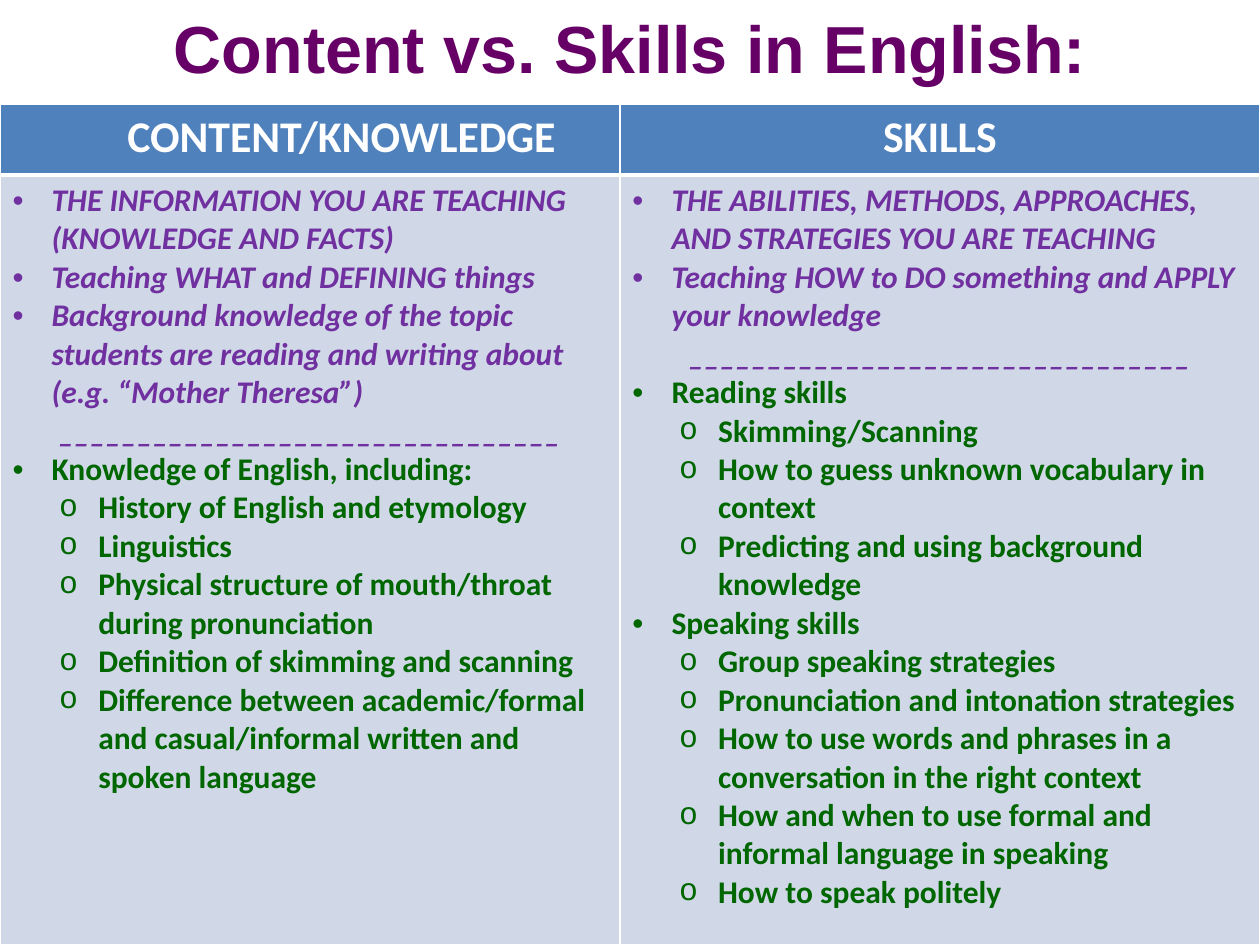
from dataclasses import dataclass

from lxml.etree import SubElement
from pptx import Presentation
from pptx.dml.color import RGBColor
from pptx.enum.text import MSO_ANCHOR, PP_ALIGN
from pptx.oxml.ns import qn
from pptx.util import Emu, Pt

PX = 9144  # 100 px to the inch
PURPLE = RGBColor(0x70, 0x30, 0xA0)
GREEN = RGBColor(0x00, 0x66, 0x00)
PLUM = RGBColor(0x66, 0x00, 0x66)
WHITE = RGBColor(0xFF, 0xFF, 0xFF)
HEADER_BLUE = RGBColor(0x4F, 0x81, 0xBD)
BODY_BLUE = RGBColor(0xD0, 0xD8, 0xE8)


@dataclass(frozen=True)
class Style:
    color: RGBColor
    size: int = 18
    italic: bool = False
    level: int = 0
    indent: int = 0
    hanging: int = 0
    bullet: str = ""
    bullet_font: str = "Arial"
    centered: bool = False


@dataclass(frozen=True)
class Line:
    text: str
    style: Style


@dataclass(frozen=True)
class Column:
    width: int
    heading: Line
    lines: list[Line]


SUMMARY = Style(PURPLE, italic=True, level=1, indent=31, hanging=31, bullet="•")
DIVIDER = Style(PURPLE, italic=True, level=1, centered=True)
TOPIC = Style(GREEN, indent=31, hanging=31, bullet="•")
DETAIL = Style(GREEN, level=2, indent=68, hanging=31, bullet="o", bullet_font="Courier New")
HEADING = Style(WHITE, size=25, centered=True)
INDENTED_HEADING = Style(WHITE, size=25, level=1, indent=50, centered=True)

DIVIDER_LINE = Line("_" * 32, DIVIDER)
ROW_HEIGHTS = (56, 611)
COLUMNS = [
    Column(492, Line("CONTENT/KNOWLEDGE", INDENTED_HEADING), [
        Line("THE INFORMATION YOU ARE TEACHING (KNOWLEDGE AND FACTS)", SUMMARY),
        Line("Teaching WHAT and DEFINING things", SUMMARY),
        Line("Background knowledge of the topic students are reading and "
             "writing about (e.g. “Mother Theresa”)", SUMMARY),
        DIVIDER_LINE,
        Line("Knowledge of English, including:", TOPIC),
        Line("History of English and etymology", DETAIL),
        Line("Linguistics", DETAIL),
        Line("Physical structure of mouth/throat during pronunciation", DETAIL),
        Line("Definition of skimming and scanning", DETAIL),
        Line("Difference between academic/formal and casual/informal "
             "written and spoken language", DETAIL),
    ]),
    Column(508, Line("SKILLS", HEADING), [
        Line("THE ABILITIES, METHODS, APPROACHES, AND STRATEGIES YOU ARE TEACHING", SUMMARY),
        Line("Teaching HOW to DO something and APPLY your knowledge", SUMMARY),
        DIVIDER_LINE,
        Line("Reading skills", TOPIC),
        Line("Skimming/Scanning", DETAIL),
        Line("How to guess unknown vocabulary in context", DETAIL),
        Line("Predicting and using background knowledge", DETAIL),
        Line("Speaking skills", TOPIC),
        Line("Group speaking strategies", DETAIL),
        Line("Pronunciation and intonation strategies", DETAIL),
        Line("How to use words and phrases in a conversation in the right context", DETAIL),
        Line("How and when to use formal and informal language in speaking", DETAIL),
        Line("How to speak politely", DETAIL),
    ]),
]


def px(length: int) -> Emu:
    return Emu(length * PX)


def write_line(paragraph, line: Line) -> None:
    style = line.style
    paragraph.text = line.text
    paragraph.level = style.level
    paragraph.alignment = PP_ALIGN.CENTER if style.centered else PP_ALIGN.LEFT
    properties = paragraph._p.get_or_add_pPr()
    properties.set("marL", str(px(style.indent)))
    properties.set("indent", str(px(-style.hanging)))
    if style.bullet:
        SubElement(properties, qn("a:buFont"), typeface=style.bullet_font)
        SubElement(properties, qn("a:buChar"), char=style.bullet)
    else:
        SubElement(properties, qn("a:buNone"))
    font = paragraph.font
    font.name, font.size = "Calibri", Pt(style.size)
    font.bold, font.italic = True, style.italic
    font.color.rgb = style.color


def set_borders(cell, widths: dict[str, int]) -> None:
    """Draw white borders; call before filling the cell, as lines precede the fill."""
    properties = cell._tc.get_or_add_tcPr()
    for side, width in widths.items():
        border = SubElement(properties, qn(f"a:ln{side}"), w=str(Pt(width)))
        fill = SubElement(border, qn("a:solidFill"))
        SubElement(fill, qn("a:srgbClr"), val=str(WHITE))


def fill_cell(cell, lines: list[Line], color: RGBColor, borders: dict[str, int]) -> None:
    set_borders(cell, borders)
    cell.fill.solid()
    cell.fill.fore_color.rgb = color
    frame = cell.text_frame
    for index, line in enumerate(lines):
        write_line(frame.add_paragraph() if index else frame.paragraphs[0], line)


def add_title(slide, text: str) -> None:
    title = slide.shapes.title
    title.left, title.top, title.width, title.height = map(px, (17, 8, 967, 58))
    title.text_frame.text = text
    title.text_frame.vertical_anchor = MSO_ANCHOR.MIDDLE
    paragraph = title.text_frame.paragraphs[0]
    paragraph.alignment = PP_ALIGN.CENTER
    font = paragraph.font
    font.name, font.size, font.bold = "Arial", Pt(38), True
    font.color.rgb = PLUM


def add_comparison_table(slide) -> None:
    frame = slide.shapes.add_table(
        len(ROW_HEIGHTS), len(COLUMNS), px(0), px(83), px(1000), px(sum(ROW_HEIGHTS)))
    table = frame.table
    for row, height in zip(table.rows, ROW_HEIGHTS):
        row.height = px(height)
    for index, column in enumerate(COLUMNS):
        table.columns[index].width = px(column.width)
        fill_cell(table.cell(0, index), [column.heading], HEADER_BLUE,
                  {"L": 1, "R": 1, "T": 1, "B": 3})
        fill_cell(table.cell(1, index), column.lines, BODY_BLUE,
                  {"L": 1, "R": 1, "T": 3, "B": 1})


def main() -> None:
    presentation = Presentation()
    presentation.slide_width, presentation.slide_height = px(1000), px(750)
    slide = presentation.slides.add_slide(presentation.slide_layouts[5])
    add_title(slide, "Content vs. Skills in English:")
    add_comparison_table(slide)
    presentation.save("out.pptx")


if __name__ == "__main__":
    main()
